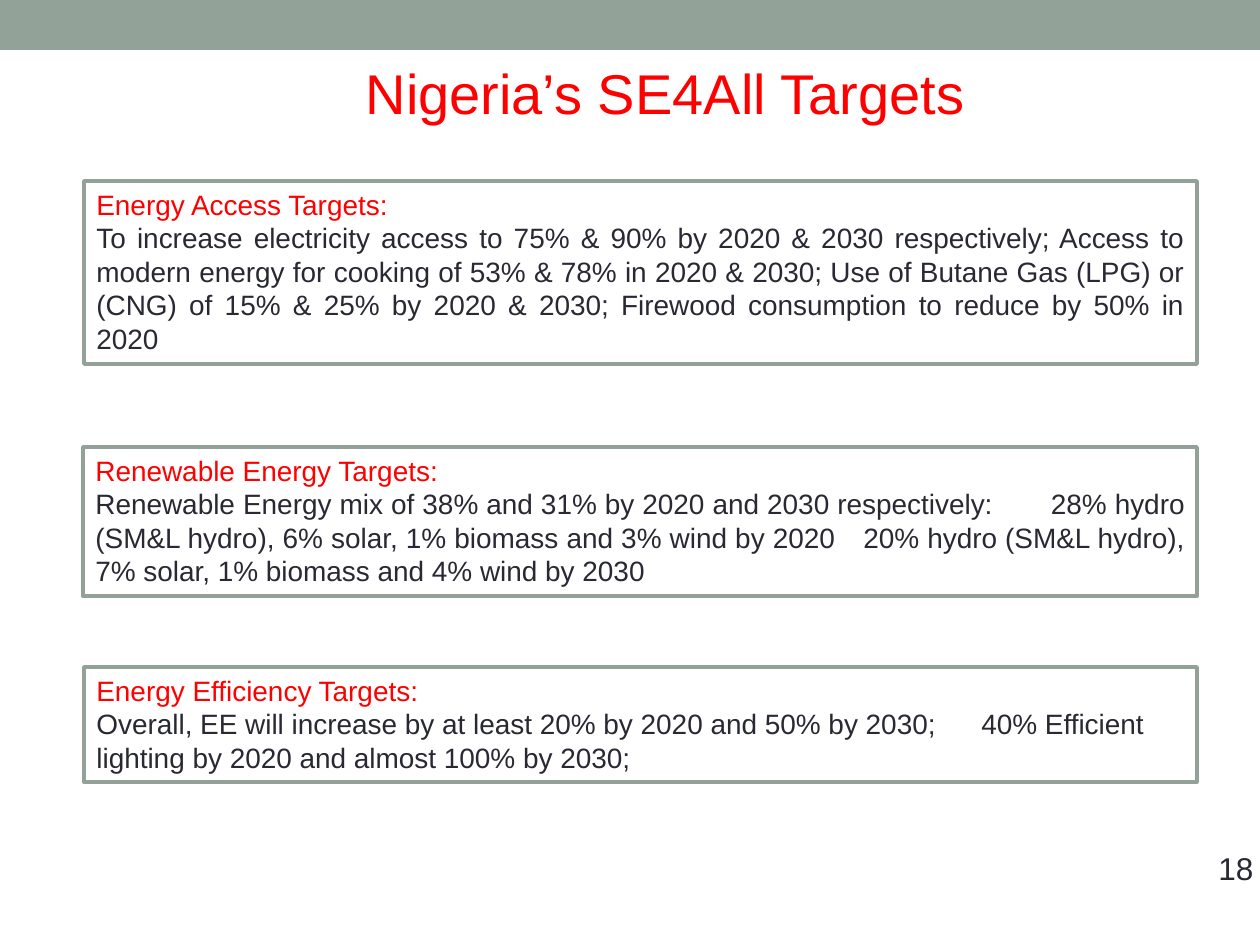
from dataclasses import dataclass

from lxml import etree
from pptx import Presentation
from pptx import util as u
from pptx.dml.color import RGBColor
from pptx.enum import shapes, text
from pptx.oxml.ns import qn

EMU_PER_PX = 914400 / 126


@dataclass(frozen=True)
class Theme:
    font: str = "Arial"
    sage: RGBColor = RGBColor(0x93, 0xA2, 0x99)
    paper: RGBColor = RGBColor(0xFF, 0xFF, 0xFF)
    heading: RGBColor = RGBColor(0xFF, 0x00, 0x00)
    ink: RGBColor = RGBColor(0x29, 0x29, 0x34)
    title_pt: int = 32
    body_pt: int = 16
    number_pt: int = 18
    border_pt: float = 2.08


@dataclass(frozen=True)
class Target:
    heading: str
    body: str
    left: int
    top: int
    width: int
    height: int
    align: text.PP_ALIGN = text.PP_ALIGN.JUSTIFY
    tabs: tuple[int, ...] = ()


THEME = Theme()

TARGETS = (
    Target(
        "Energy Access Targets:",
        "To increase electricity access to 75% & 90% by 2020 & 2030 respectively; "
        "Access to modern energy for cooking of 53% & 78% in 2020 & 2030; "
        "Use of Butane Gas (LPG) or (CNG) of 15% & 25% by 2020 & 2030; "
        "Firewood consumption to reduce by 50% in 2020",
        84, 181, 1113, 183,
    ),
    Target(
        "Renewable Energy Targets:",
        "Renewable Energy mix of 38% and 31% by 2020 and 2030 respectively:\t"
        "28% hydro (SM&L hydro), 6% solar, 1% biomass and 3% wind by 2020\t"
        "20% hydro (SM&L hydro), 7% solar, 1% biomass and 4% wind by 2030",
        83, 447, 1114, 149, tabs=(764, 952),
    ),
    Target(
        "Energy Efficiency Targets:",
        "Overall, EE will increase by at least 20% by 2020 and 50% by 2030;\t"
        "40% Efficient lighting by 2020 and almost 100% by 2030;",
        84, 667, 1113, 115, align=text.PP_ALIGN.LEFT, tabs=(885,),
    ),
)


def px(length: int) -> u.Emu:
    return u.Emu(round(length * EMU_PER_PX))


def add_run(paragraph, words: str, size: int, color: RGBColor) -> None:
    run = paragraph.add_run()
    run.text = words
    run.font.name = THEME.font
    run.font.size = u.Pt(size)
    run.font.color.rgb = color


def set_tabs(paragraph, stops: tuple[int, ...]) -> None:
    tab_list = etree.SubElement(paragraph._p.get_or_add_pPr(), qn("a:tabLst"))
    for stop in stops:
        etree.SubElement(tab_list, qn("a:tab"), pos=str(px(stop)), algn="l")


def fit_frame(frame, wrap: bool) -> None:
    frame.word_wrap = wrap
    frame.auto_size = text.MSO_AUTO_SIZE.SHAPE_TO_FIT_TEXT
    frame.vertical_anchor = text.MSO_ANCHOR.TOP


def add_panel(slide, left: int, top: int, width: int, height: int, fill: RGBColor):
    panel = slide.shapes.add_shape(
        shapes.MSO_SHAPE.RECTANGLE, px(left), px(top), px(width), px(height))
    panel.shadow.inherit = False
    panel.fill.solid()
    panel.fill.fore_color.rgb = fill
    panel.line.fill.background()
    return panel


def add_target(slide, target: Target) -> None:
    panel = add_panel(slide, target.left, target.top, target.width, target.height,
                      THEME.paper)
    panel.line.color.rgb = THEME.sage
    panel.line.width = u.Pt(THEME.border_pt)
    frame = panel.text_frame
    fit_frame(frame, wrap=True)
    heading, body = frame.paragraphs[0], frame.add_paragraph()
    heading.alignment = body.alignment = target.align
    if target.tabs:
        set_tabs(body, target.tabs)
    add_run(heading, target.heading, THEME.body_pt, THEME.heading)
    add_run(body, target.body, THEME.body_pt, THEME.ink)


def fill_label(label, words: str, size: int, color: RGBColor) -> None:
    fit_frame(label.text_frame, wrap=False)
    paragraph = label.text_frame.paragraphs[0]
    paragraph.alignment = text.PP_ALIGN.LEFT
    add_run(paragraph, words, size, color)


def main() -> None:
    deck = Presentation()
    deck.slide_width, deck.slide_height = px(1260), px(945)
    slide = deck.slides.add_slide(deck.slide_layouts[5])

    # Top band
    add_panel(slide, 0, 0, 1260, 50, THEME.sage)

    # Title
    title = slide.shapes.title
    title.left, title.top, title.width, title.height = map(px, (353, 52, 630, 81))
    fill_label(title, "Nigeria’s SE4All Targets", THEME.title_pt, THEME.heading)

    # Target panels
    for target in TARGETS:
        add_target(slide, target)

    # Page number
    page_number = slide.shapes.add_textbox(px(1206), px(843), px(60), px(50))
    fill_label(page_number, "18", THEME.number_pt, THEME.ink)

    deck.save("out.pptx")


if __name__ == "__main__":
    main()
